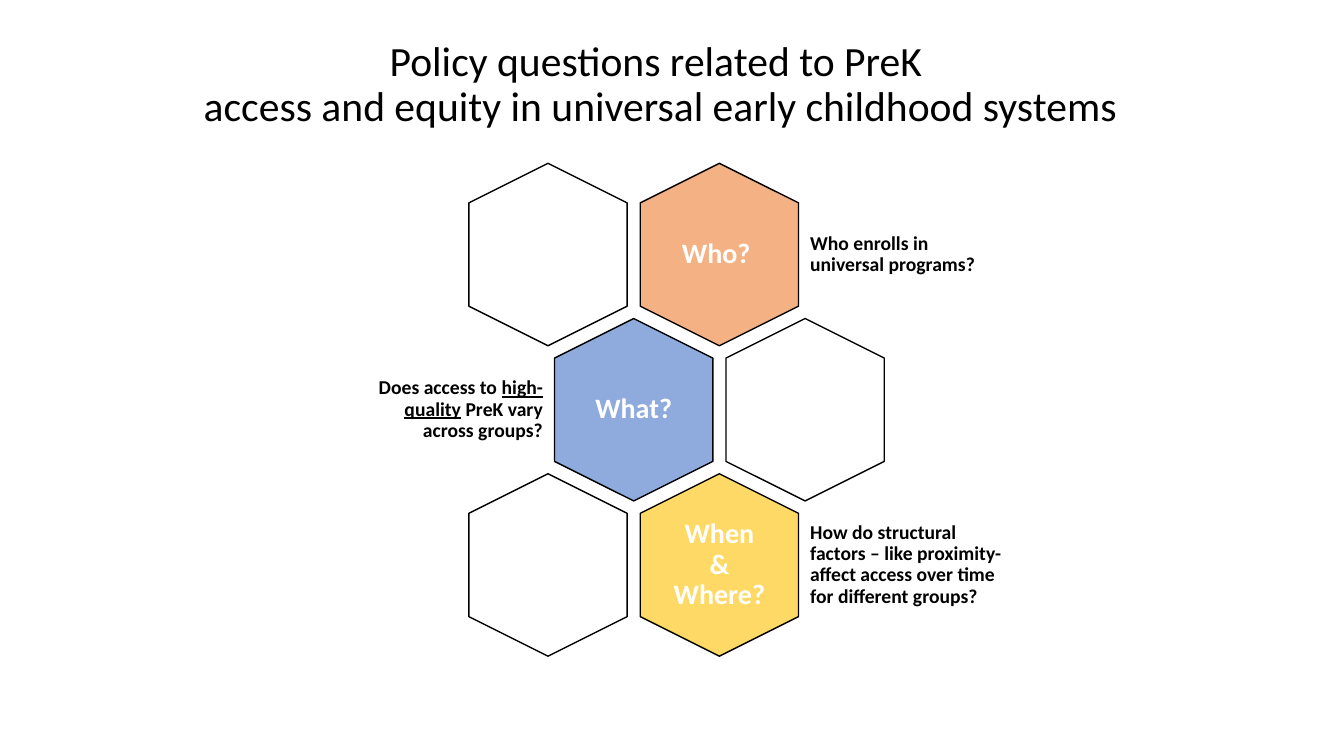
from collections import namedtuple
from dataclasses import dataclass

from pptx import Presentation
from pptx import util as u
from pptx.dml.color import RGBColor
from pptx.enum import shapes, text

PX = 9144  # EMU per px, 100 px to the inch


@dataclass(frozen=True)
class Theme:
    font: str = "Calibri"
    ink: str = "000000"
    paper: str = "FFFFFF"
    who: str = "F4B183"
    what: str = "8FAADC"
    when: str = "FFD966"
    title_size: float = 29.7
    label_size: int = 20
    note_size: int = 14


THEME = Theme()
Box = namedtuple("Box", "left top width height")
Row = namedtuple("Row", "label fill question column side note_width")

# Hexagon grid: size of a tile, steps between centres, shift of odd rows
TILE_LENGTH, TILE_BREADTH = 181, 157
COLUMN_STEP, ROW_STEP, ODD_SHIFT = 170, 154, 85
NOTE_GAP, NOTE_HEIGHT = 84, 108

ROWS = [
    Row("Who? ", THEME.who, "Who enrolls in universal programs?", 1, "right", 202),
    Row("What?", THEME.what,
        "Does access to _high-quality_ PreK vary across groups?", 0, "left", 195),
    Row("When & Where?", THEME.when,
        "How do structural factors – like proximity- affect access over time "
        "for different groups?", 1, "right", 202),
]


def emu(box):
    return [u.Emu(round(length * PX)) for length in box]


def centred(x, y, width, height):
    return Box(x - width / 2, y - height / 2, width, height)


def write(frame, words, *, size, color=THEME.ink, bold=False,
          align=text.PP_ALIGN.CENTER, inset=None):
    """Fill a text frame; words between underscores are underlined."""
    frame.word_wrap = True
    frame.auto_size = text.MSO_AUTO_SIZE.NONE
    frame.vertical_anchor = text.MSO_ANCHOR.MIDDLE
    if inset is not None:
        frame.margin_left = frame.margin_right = u.Emu(inset * PX)
        frame.margin_top = frame.margin_bottom = u.Emu(inset * PX)
    paragraph = frame.paragraphs[0]
    paragraph.alignment = align
    paragraph.line_spacing = 0.9
    for index, part in enumerate(words.split("_")):
        for line, piece in enumerate(part.split("\n")):
            if line:
                paragraph.add_line_break()
            run = paragraph.add_run()
            run.text = piece
            run.font.name = THEME.font
            run.font.size = u.Pt(size)
            run.font.bold = bold
            run.font.color.rgb = RGBColor.from_string(color)
            if index % 2:
                run.font.underline = True


def add_title(slide, box):
    title = slide.shapes.title
    title.left, title.top, title.width, title.height = emu(box)
    write(title.text_frame,
          "Policy questions related to PreK \n"
          "access and equity in universal early childhood systems",
          size=THEME.title_size)


def add_hexagon(comb, x, y, fill):
    tile = comb.add_shape(shapes.MSO_SHAPE.HEXAGON,
                          *emu(centred(x, y, TILE_LENGTH, TILE_BREADTH)))
    tile.rotation = 90
    tile.adjustments[0] = 0.25
    tile.adjustments[1] = 1.155
    tile.shadow.inherit = False
    tile.fill.solid()
    tile.fill.fore_color.rgb = RGBColor.from_string(fill)
    tile.line.color.rgb = RGBColor.from_string(THEME.ink)
    tile.line.width = u.Pt(1)


def add_row(comb, row, xs, y):
    # Coloured tile and its blank neighbour
    x = xs[row.column]
    add_hexagon(comb, x, y, row.fill)
    add_hexagon(comb, xs[1 - row.column], y, THEME.paper)

    # Label inside the tile
    label = comb.add_textbox(*emu(centred(x, y, 108, 124)))
    write(label.text_frame, row.label, size=THEME.label_size,
          color=THEME.paper, bold=True, inset=8)

    # Question beside the tile
    on_right = row.side == "right"
    left = x + NOTE_GAP if on_right else x - NOTE_GAP - row.note_width
    question = comb.add_textbox(
        *emu(Box(left, y - NOTE_HEIGHT / 2, row.note_width, NOTE_HEIGHT)))
    write(question.text_frame, row.question, size=THEME.note_size, bold=True,
          align=text.PP_ALIGN.LEFT if on_right else text.PP_ALIGN.RIGHT, inset=6)


def add_honeycomb(slide, box):
    comb = slide.shapes.add_group_shape().shapes
    for index, row in enumerate(ROWS):
        first = box.left + TILE_BREADTH / 2 + ODD_SHIFT * (index % 2)
        y = box.top + TILE_LENGTH / 2 + ROW_STEP * index
        add_row(comb, row, (first, first + COLUMN_STEP), y)


def main():
    deck = Presentation()
    deck.slide_width, deck.slide_height = emu((1333, 750))
    slide = deck.slides.add_slide(deck.slide_layouts[5])
    add_title(slide, Box(185, 12, 941, 145))
    add_honeycomb(slide, Box(465, 162, 412, 489))
    deck.save("out.pptx")


if __name__ == "__main__":
    main()
